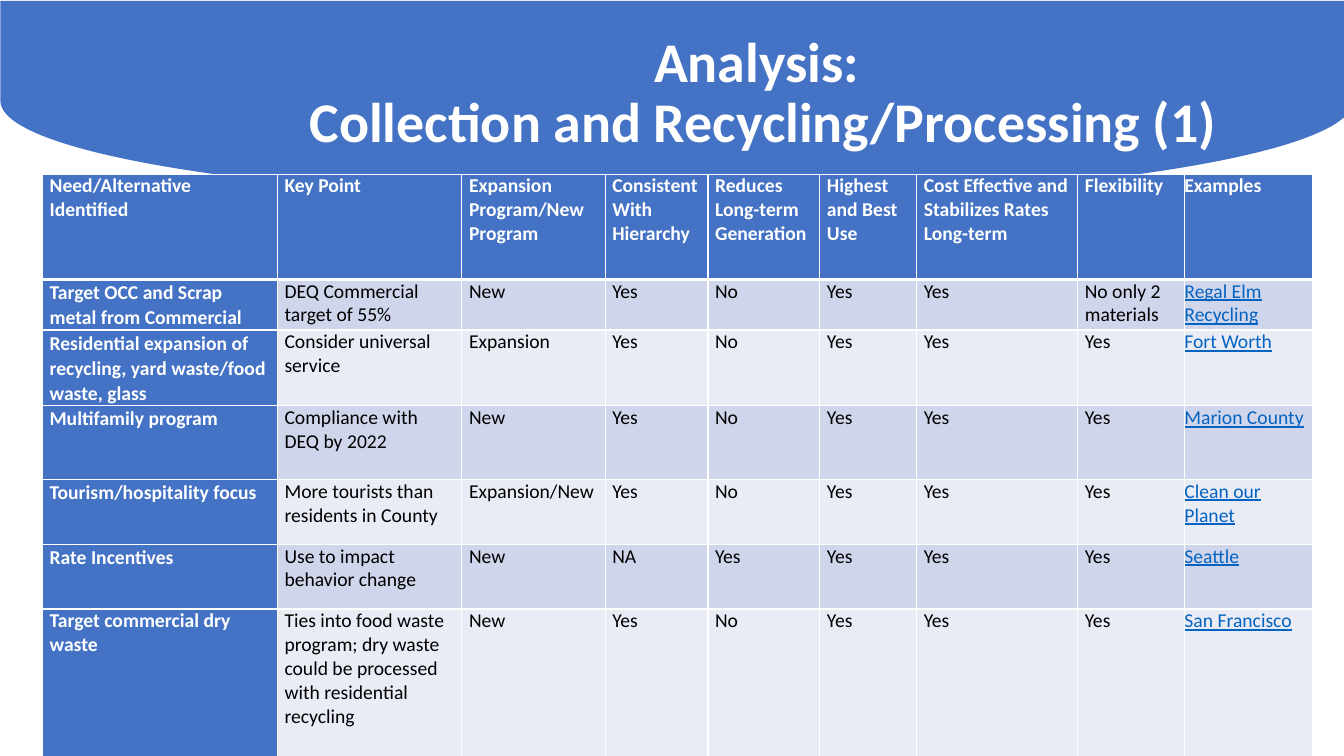
from dataclasses import dataclass

from lxml.etree import SubElement
from pptx import Presentation
from pptx.dml.color import RGBColor as RGB
from pptx.enum.shapes import MSO_SHAPE as SHAPE
from pptx.enum.text import MSO_ANCHOR as ANCHOR, PP_ALIGN as ALIGN
from pptx.oxml.ns import qn
from pptx.util import Cm, Pt


@dataclass(frozen=True)
class Theme:
    font: str = "Calibri"
    blue: str = "4472C4"
    white: str = "FFFFFF"
    black: str = "000000"
    link: str = "0563C1"
    bands: tuple = ("CFD5EA", "E9EBF5")
    title_size: int = 40
    table_size: int = 14


theme = Theme()


def write(tf, text, size=theme.table_size, color=theme.black, bold=False,
          underline=False, align=ALIGN.LEFT, spacing=1.0, after=7.2):
    p = tf.paragraphs[0]
    p.text = text
    p.alignment = align
    p.line_spacing = spacing
    p.space_after = Pt(after)
    for r in p.runs:
        r.font.name = theme.font
        r.font.size = Pt(size)
        r.font.bold = bold
        r.font.underline = underline
        r.font.color.rgb = RGB.from_string(color)


def add_borders(cell, top=1, bottom=1):
    # Borders must precede the fill, so call this before filling the cell
    tc_pr = cell._tc.get_or_add_tcPr()
    for side, width in (("L", 1), ("R", 1), ("T", top), ("B", bottom)):
        ln = SubElement(tc_pr, qn(f"a:ln{side}"), w=str(Pt(width)))
        fill = SubElement(ln, qn("a:solidFill"))
        SubElement(fill, qn("a:srgbClr"), val=theme.white)


prs = Presentation()
prs.slide_width, prs.slide_height = Cm(33.87), Cm(19.05)
s = prs.slides.add_slide(prs.slide_layouts[6])

# Curved banner
sp = s.shapes.add_shape(SHAPE.FLOWCHART_DELAY, Cm(14.53), Cm(-14.5), Cm(5.05), Cm(34.09))
sp.rotation = 90
sp.shadow.inherit = False
sp.fill.solid()
sp.fill.fore_color.rgb = RGB.from_string(theme.blue)
sp.line.fill.background()

# Table content: first row is the header
rows = [
    ["Need/Alternative Identified", "Key Point", "Expansion Program/New Program",
     "Consistent With Hierarchy", "Reduces Long-term Generation", "Highest and Best Use",
     "Cost Effective and Stabilizes Rates Long-term", "Flexibility", "Examples"],
    ["Target OCC and Scrap metal from Commercial", "DEQ Commercial target of 55%",
     "New", "Yes", "No", "Yes", "Yes", "No only 2 materials", "Regal Elm Recycling"],
    ["Residential expansion of recycling, yard waste/food waste, glass",
     "Consider universal service",
     "Expansion", "Yes", "No", "Yes", "Yes", "Yes", "Fort Worth"],
    ["Multifamily program", "Compliance with DEQ by 2022",
     "New", "Yes", "No", "Yes", "Yes", "Yes", "Marion County"],
    ["Tourism/hospitality focus", "More tourists than residents in County",
     "Expansion/New", "Yes", "No", "Yes", "Yes", "Yes", "Clean our Planet"],
    ["Rate Incentives", "Use to impact behavior change",
     "New", "NA", "Yes", "Yes", "Yes", "Yes", "Seattle"],
    ["Target commercial dry waste",
     "Ties into food waste program; dry waste could be processed with residential recycling",
     "New", "Yes", "No", "Yes", "Yes", "Yes", "San Francisco"],
]
col_widths = [5.92, 4.65, 3.61, 2.59, 2.82, 2.44, 4.06, 2.69, 3.23]
row_heights = [2.65, 1.25, 1.91, 1.86, 1.63, 1.63, 3.71]
last_row, last_col = len(rows) - 1, len(col_widths) - 1

# Table
table = s.shapes.add_table(len(rows), len(col_widths), Cm(1.07), Cm(4.39),
                           Cm(sum(col_widths)), Cm(sum(row_heights))).table
table.horz_banding = False
for col, width in zip(table.columns, col_widths):
    col.width = Cm(width)
for row, height in zip(table.rows, row_heights):
    row.height = Cm(height)

for i, texts in enumerate(rows):
    for j, text in enumerate(texts):
        cell = table.cell(i, j)
        heading = i == 0 or j == 0
        example = j == last_col and not heading
        cell.margin_left = cell.margin_right = Cm(0 if j == last_col else 0.18)
        cell.margin_top = cell.margin_bottom = Cm(0)
        add_borders(cell, top=3 if i == 1 else 1, bottom=3 if i == 0 else 1)
        cell.fill.solid()
        fill = theme.blue if heading else theme.bands[(i - 1) % 2]
        cell.fill.fore_color.rgb = RGB.from_string(fill)
        row_label = j == 0 and 0 < i < last_row
        write(cell.text_frame, text, bold=heading, underline=example,
              color=theme.white if heading else theme.link if example else theme.black,
              spacing=1.06 if row_label else 1.0, after=0 if row_label else 7.2)

# Title
tf = s.shapes.add_textbox(Cm(5.31), Cm(0.71), Cm(27.84), Cm(3.33)).text_frame
tf.word_wrap = True
tf.vertical_anchor = ANCHOR.MIDDLE
write(tf, "Analysis: \vCollection and Recycling/Processing (1)", size=theme.title_size,
      color=theme.white, bold=True, align=ALIGN.CENTER, spacing=0.9, after=0)

prs.save("out.pptx")
